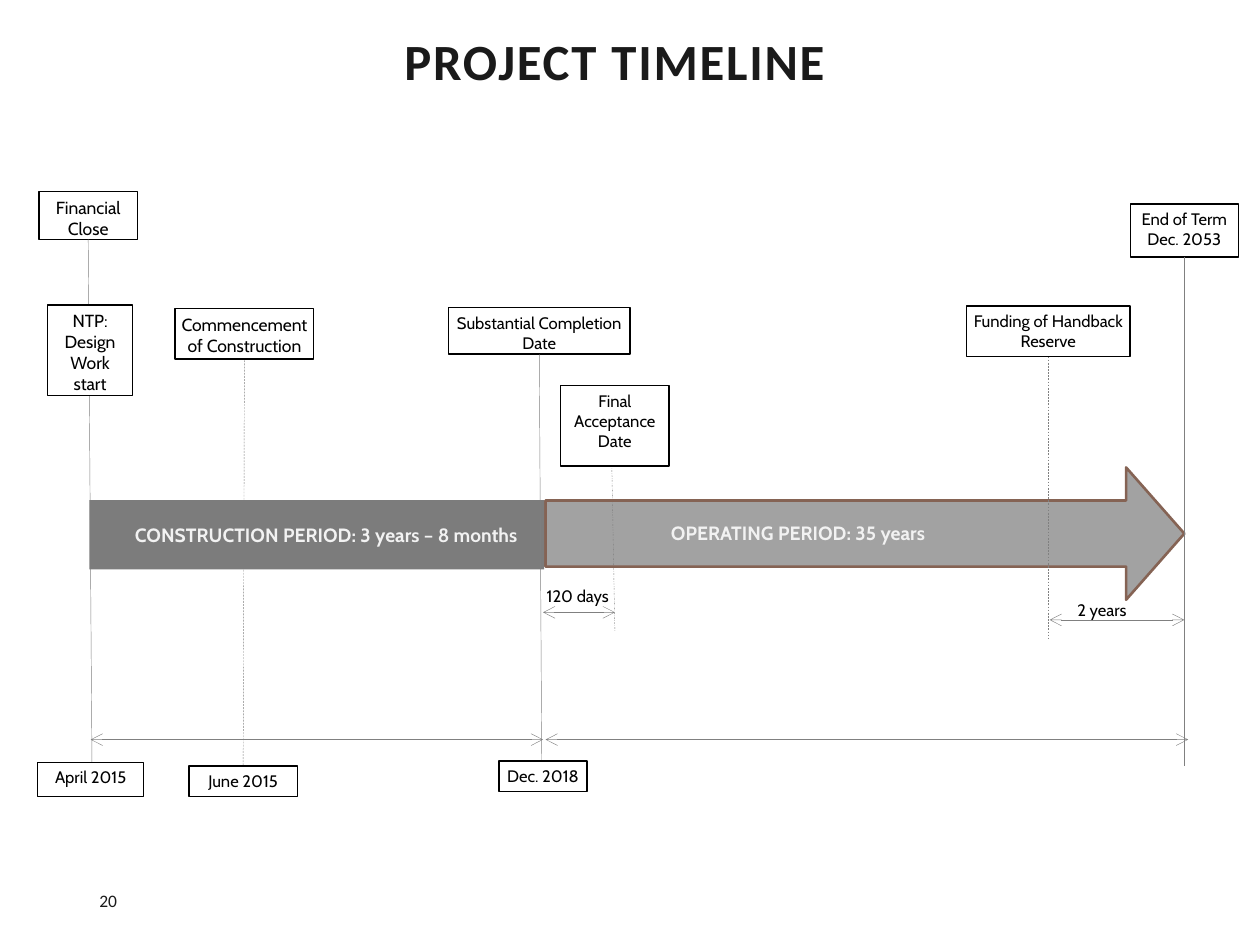
from lxml.etree import SubElement
from pptx import Presentation
from pptx.dml.color import RGBColor
from pptx.enum.dml import MSO_LINE as Dash
from pptx.enum.shapes import MSO_CONNECTOR as Link, MSO_SHAPE as Kind
from pptx.enum.text import MSO_ANCHOR as Anchor, PP_ALIGN as Align
from pptx.oxml.ns import qn
from pptx.util import Inches, Pt

BLACK = RGBColor(0x00, 0x00, 0x00)
INK = RGBColor(0x1A, 0x1A, 0x1A)
GRAY = RGBColor(0x80, 0x80, 0x80)
BAR = RGBColor(0x7C, 0x7C, 0x7C)
BROWN = RGBColor(0x85, 0x63, 0x54)
WHITE = RGBColor(0xFF, 0xFF, 0xFF)
PALE = RGBColor(0xF2, 0xF2, 0xF2)


class Board:
    def __init__(self, slide, font="Cabin", size=9.5, inset=0.04):
        self.shapes = slide.shapes
        self.font, self.size, self.inset = font, size, inset

    def letter(self, shape, text, size=None, color=BLACK, bold=False,
               align=Align.CENTER, font=None, inset=None, anchor=Anchor.TOP):
        """Put styled text into a shape."""
        frame = shape.text_frame
        frame.word_wrap = True
        frame.vertical_anchor = anchor
        if inset is None:
            inset = self.inset
        frame.margin_left = frame.margin_right = Inches(inset)
        frame.margin_top = frame.margin_bottom = Inches(min(inset, 0.05))
        frame.text = text
        for para in frame.paragraphs:
            para.alignment = align
            para.font.name = font or self.font
            para.font.size = Pt(size or self.size)
            para.font.bold = bold
            para.font.color.rgb = color

    def label(self, at, text, **style):
        box = self.shapes.add_textbox(*map(Inches, at))
        self.letter(box, text, **style)
        return box

    def shape(self, kind, at, fill=None, line=None, width=0.75):
        item = self.shapes.add_shape(kind, *map(Inches, at))
        item.shadow.inherit = False
        if fill is None:
            item.fill.background()
        else:
            item.fill.solid()
            item.fill.fore_color.rgb = fill
        if line is None:
            item.line.fill.background()
        else:
            item.line.color.rgb = line
            item.line.width = Pt(width)
        return item

    def box(self, at, text, fill=None, size=None):
        self.letter(self.shape(Kind.RECTANGLE, at, fill, BLACK), text, size)

    def line(self, x1, y1, x2, y2, dash=None):
        link = self.shapes.add_connector(
            Link.STRAIGHT, *map(Inches, (x1, y1, x2, y2)))
        link.line.color.rgb = GRAY
        link.line.width = Pt(0.25)
        if dash:
            link.line.dash_style = dash
        SubElement(link._element.spPr, qn("a:effectLst"))
        return link

    def span(self, x1, x2, y):
        """Draw a level line with an arrowhead at both ends."""
        ln = self.line(x1, y, x2, y)._element.spPr.find(qn("a:ln"))
        for end in ("a:headEnd", "a:tailEnd"):
            SubElement(ln, qn(end), type="arrow")

    def arrow(self, at, alpha):
        """Draw the block arrow with its fill at alpha percent."""
        item = self.shape(Kind.RIGHT_ARROW, at, BAR, BROWN, 1.5)
        item.adjustments[0] = 0.5
        item.adjustments[1] = 0.44
        color = item._element.spPr.find(qn("a:solidFill"))[0]
        SubElement(color, qn("a:alpha"), val=str(alpha * 1000))


def main():
    deck = Presentation()
    deck.slide_width, deck.slide_height = Inches(10), Inches(7.5)
    board = Board(deck.slides.add_slide(deck.slide_layouts[6]))

    board.label((0.69, 6.95, 2.25, 0.4), "20", size=10, font="Calibri",
                color=INK, align=Align.LEFT, inset=0.1, anchor=Anchor.MIDDLE)

    # Final acceptance sits behind the operating arrow
    board.line(4.85, 3.38, 4.88, 5.01, Dash.DASH_DOT)
    board.box((4.45, 3.06, 0.86, 0.64), "Final Acceptance Date", WHITE)
    board.arrow((4.33, 3.71, 5.07, 1.05), 71)

    # Start and end of term
    board.box((0.31, 1.52, 0.78, 0.38), "Financial Close", size=10)
    board.line(0.7, 1.9, 0.73, 6.05)
    board.box((0.3, 6.05, 0.84, 0.27), "April 2015")
    board.span(0.72, 4.31, 5.87)
    board.box((8.97, 1.62, 0.86, 0.42), "End of Term\nDec. 2053")
    board.line(9.4, 2.04, 9.4, 6.08)
    board.box((0.38, 2.42, 0.67, 0.72), "NTP: Design Work start", WHITE, 10)

    # Commencement
    board.line(1.94, 2.86, 1.93, 6.08, Dash.DASH)
    board.box((1.39, 2.45, 1.1, 0.4), "Commencement of Construction", size=10)
    board.box((1.5, 6.08, 0.86, 0.24), "June 2015")

    # Periods
    period = dict(size=11, color=PALE, bold=True)
    board.label((4.17, 4.1, 4.33, 0.27), "OPERATING PERIOD: 35 years", **period)
    board.shape(Kind.RECTANGLE, (0.71, 3.97, 3.61, 0.55), BAR)
    board.label((1.03, 4.11, 3.12, 0.27),
                "CONSTRUCTION PERIOD: 3 years – 8 months", **period)

    # Substantial completion
    board.box((3.56, 2.44, 1.44, 0.37), "Substantial Completion\nDate")
    board.line(4.28, 2.81, 4.3, 6.08)
    board.span(4.31, 4.88, 4.86)
    board.label((4.29, 4.61, 0.59, 0.25), "120 days")

    # Handback
    board.line(8.32, 2.83, 8.32, 5.07, Dash.DASH)
    board.box((7.67, 2.43, 1.3, 0.4), "Funding of Handback Reserve")
    board.span(8.33, 9.4, 4.92)
    board.label((8.51, 4.72, 0.71, 0.21), "2 years", align=Align.LEFT)
    board.span(4.33, 9.43, 5.87)
    board.box((3.96, 6.04, 0.7, 0.24), "Dec. 2018", WHITE)

    title = board.label((2.25, 0.23, 5.26, 0.59), "PROJECT TIMELINE", size=29,
                        font="Calibri", color=INK, bold=True, inset=0.1,
                        anchor=Anchor.MIDDLE)
    para = title.text_frame.paragraphs[0]
    para.line_spacing = 0.8
    para.runs[0]._r.get_or_add_rPr().set("spc", "100")

    deck.save("out.pptx")


if __name__ == "__main__":
    main()
